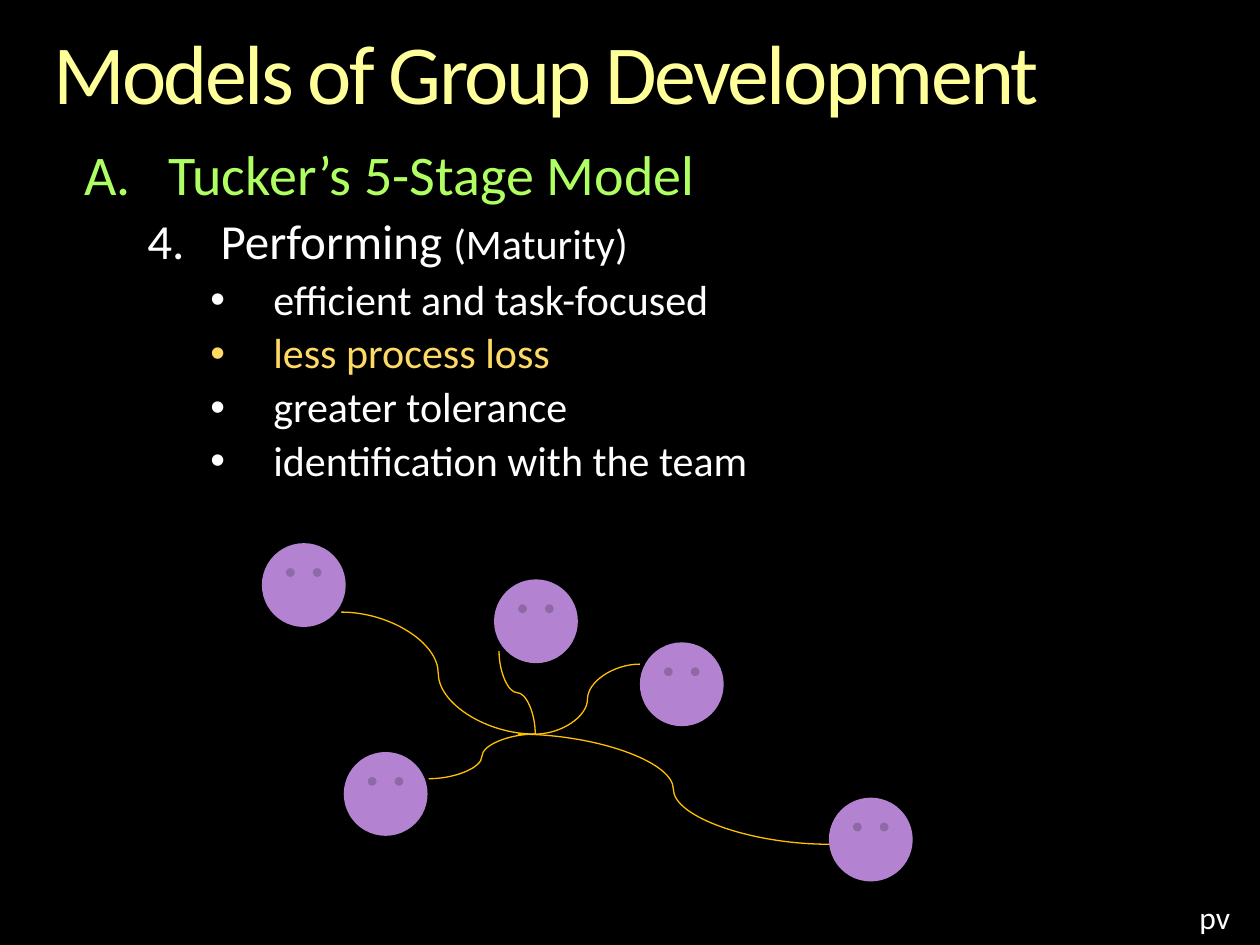
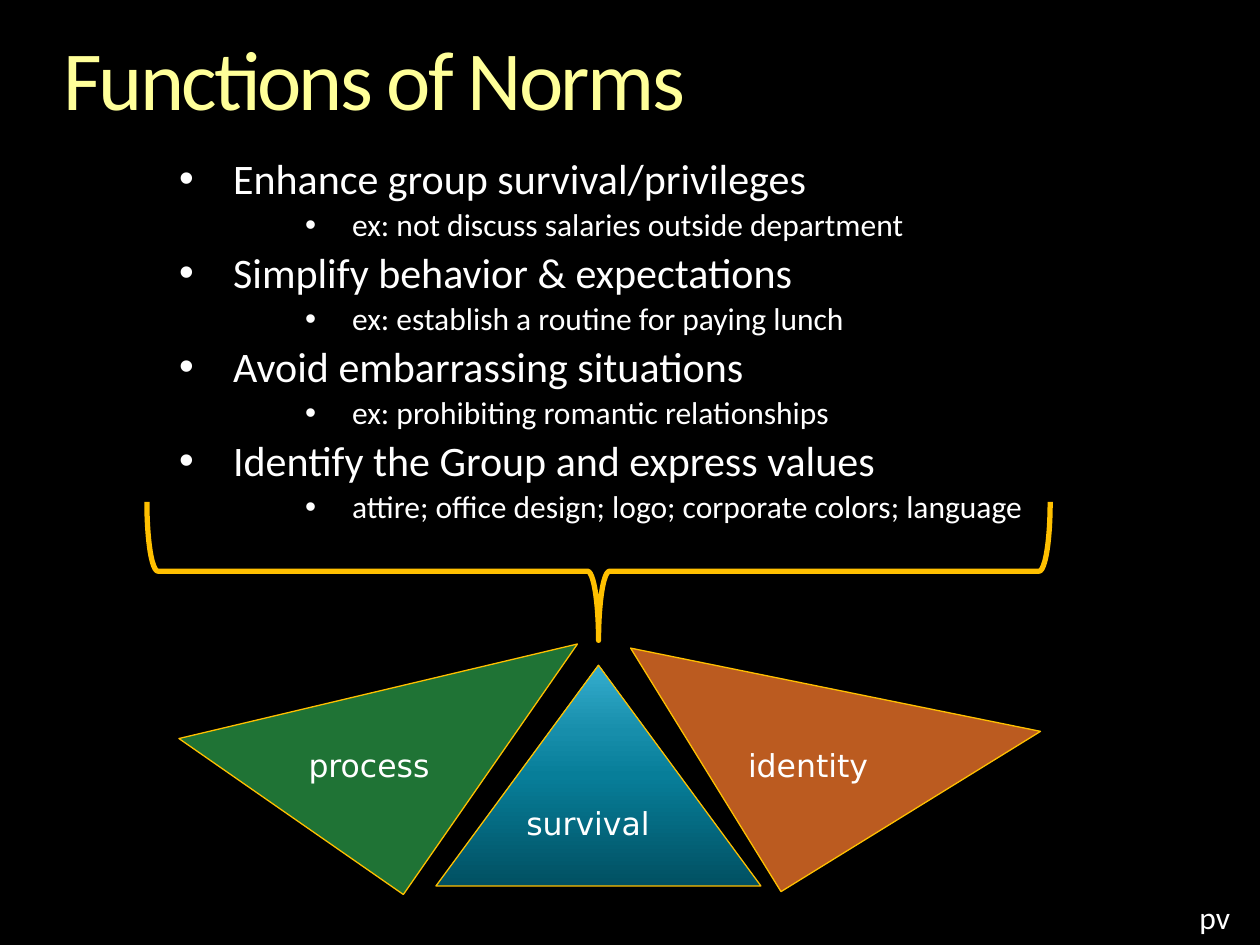
from dataclasses import dataclass

from lxml import etree
from pptx import Presentation
from pptx import util as u
from pptx.dml.color import RGBColor
from pptx.enum import shapes, text
from pptx.oxml.ns import qn


@dataclass(frozen=True)
class Theme:
    font: str = "Calibri"
    label_font: str = "DejaVu Sans"
    background: str = "000000"
    title: str = "FFFF99"
    heading: str = "B0FF62"
    body: str = "FFFFFF"
    highlight: str = "FFD966"
    line: str = "FFC000"
    face: str = "B382D0"
    process: str = "1F7335"
    identity: str = "BB5B20"
    survival: tuple = ((0, "015062"), (50, "077E99"), (70, "178EAB"), (100, "35ADCE"))
    title_size: int = 48
    heading_size: int = 32
    stage_size: int = 28
    point_size: int = 24
    small_size: int = 18
    thin: float = 0.75
    thick: float = 3


THEME = Theme()
SHAPE = shapes.MSO_SHAPE


@dataclass(frozen=True)
class ListStyle:
    """Outline level, left margin and hanging indent in cm, and bullet element."""
    level: int
    margin: float
    hanging: float
    bullet: tuple = ("a:buChar", {"char": "•"})


MODEL = ListStyle(0, 1.7, 1.7, ("a:buAutoNum", {"type": "alphaUcPeriod"}))
STAGE = ListStyle(1, 2.75, 1.48, ("a:buAutoNum", {"type": "arabicPeriod", "startAt": "4"}))
TRAIT = ListStyle(2, 3.81, 1.27)
NORM = ListStyle(0, 1.09, 1.09)
EXAMPLE = ListStyle(2, 3.49, 0.95)


def cm(*lengths):
    return [u.Cm(length) for length in lengths]


def add_run(paragraph, wording, size, color=THEME.body, font=THEME.font):
    run = paragraph.add_run()
    run.text = wording
    run.font.name = font
    run.font.size = u.Pt(size)
    run.font.color.rgb = RGBColor.from_string(color)
    return run


def prepare_frame(frame):
    """Remove the insets and let the frame grow downwards."""
    frame.margin_left = frame.margin_top = frame.margin_right = frame.margin_bottom = 0
    frame.word_wrap = True
    frame.vertical_anchor = text.MSO_ANCHOR.TOP
    frame.auto_size = text.MSO_AUTO_SIZE.SHAPE_TO_FIT_TEXT


def add_title_slide(presentation, title, box):
    """Add a title-only slide with its title and the shared footer."""
    slide = presentation.slides.add_slide(presentation.slide_layouts[5])
    shape = slide.shapes.title
    shape.left, shape.top, shape.width, shape.height = cm(*box)
    prepare_frame(shape.text_frame)
    paragraph = shape.text_frame.paragraphs[0]
    paragraph.alignment = text.PP_ALIGN.LEFT
    paragraph.line_spacing = 0.9
    run = add_run(paragraph, title, THEME.title_size, THEME.title)
    run._r.get_or_add_rPr().set("spc", "-150")
    add_label(slide, "pv", (23.93, 17.98, 1.47, 1.07), THEME.font)
    return slide


def add_label(slide, wording, box, font=THEME.label_font):
    frame = slide.shapes.add_textbox(*cm(*box)).text_frame
    frame.word_wrap = True
    add_run(frame.paragraphs[0], wording, THEME.small_size, font=font)


def set_bullet(paragraph, style):
    paragraph.level = style.level
    properties = paragraph._p.get_or_add_pPr()
    properties.set("marL", str(u.Cm(style.margin)))
    properties.set("indent", str(-u.Cm(style.hanging)))
    etree.SubElement(properties, qn("a:buFont"), typeface="Arial")
    tag, attributes = style.bullet
    etree.SubElement(properties, qn(tag), attributes)


def add_outline(slide, box, items):
    """Each item is a list style followed by its runs: (wording, size[, color])."""
    frame = slide.shapes.add_textbox(*cm(*box)).text_frame
    prepare_frame(frame)
    for index, (style, *runs) in enumerate(items):
        paragraph = frame.add_paragraph() if index else frame.paragraphs[0]
        set_bullet(paragraph, style)
        paragraph.line_spacing = 0.9
        if index:
            paragraph.space_before = u.Pt(0.2 * runs[0][1])
        for run in runs:
            add_run(paragraph, *run)


def add_figure(slide, kind, box, fill=None, line_width=None, rotation=0):
    shape = slide.shapes.add_shape(kind, *cm(*box))
    shape.shadow.inherit = False
    shape.rotation = rotation
    if fill:
        shape.fill.solid()
        shape.fill.fore_color.rgb = RGBColor.from_string(fill)
    else:
        shape.fill.background()
    if line_width:
        shape.line.color.rgb = RGBColor.from_string(THEME.line)
        shape.line.width = u.Pt(line_width)
    else:
        shape.line.fill.background()
    return shape


def fill_upwards(shape, stops):
    """Fill with a gradient whose first stop lies at the bottom."""
    shape.fill.gradient()
    shape.fill.gradient_angle = 90
    stop_list = shape._element.spPr.find(".//" + qn("a:gsLst"))
    stop_list.clear()
    for percent, color in stops:
        stop = etree.SubElement(stop_list, qn("a:gs"), pos=str(percent * 1000))
        etree.SubElement(stop, qn("a:srgbClr"), val=color)


def add_curve(slide, start, end, upright=False):
    """Draw an S-curve; an upright one leaves and arrives vertically."""
    (x1, y1), (x2, y2) = start, end
    if upright:
        middle_x, middle_y = (x1 + x2) / 2, (y1 + y2) / 2
        half_x, half_y = (y1 - y2) / 2, (x2 - x1) / 2
        x1, y1 = middle_x - half_x, middle_y - half_y
        x2, y2 = middle_x + half_x, middle_y + half_y
    connector = slide.shapes.add_connector(shapes.MSO_CONNECTOR.CURVE, *cm(x1, y1, x2, y2))
    connector.line.color.rgb = RGBColor.from_string(THEME.line)
    connector.line.width = u.Pt(THEME.thin)
    properties = connector._element.spPr
    etree.SubElement(properties, qn("a:effectLst"))
    if upright:
        properties.find(qn("a:xfrm")).set("rot", str(270 * 60000))


def build_group_models(presentation):
    slide = add_title_slide(presentation, "Models of Group Development", (1.07, 0.64, 22.86, 1.5))
    size = THEME.point_size
    add_outline(slide, (1.7, 2.97, 22.23, 7.06), [
        (MODEL, ("Tucker’s 5-Stage Model", THEME.heading_size, THEME.heading)),
        (STAGE, ("Performing ", THEME.stage_size), ("(Maturity)", size)),
        (TRAIT, ("efficient and task-focused", size)),
        (TRAIT, ("less process loss", size, THEME.highlight)),
        (TRAIT, ("greater tolerance", size)),
        (TRAIT, ("identification with the team", size)),
    ])
    face_size = 1.69
    for left, top in ((5.28, 10.95), (9.96, 11.68), (6.93, 15.16), (16.71, 16.08), (12.9, 12.95)):
        add_figure(slide, SHAPE.SMILEY_FACE, (left, top, face_size, face_size), THEME.face)
    hub = (10.79, 14.8)
    add_curve(slide, (8.64, 15.7), hub)
    add_curve(slide, hub, (10.06, 13.13), upright=True)
    add_curve(slide, hub, (12.9, 13.39))
    add_curve(slide, (10.44, 14.8), (16.71, 17.02))
    add_curve(slide, (6.88, 12.34), hub)


def build_norm_functions(presentation):
    slide = add_title_slide(presentation, "Functions of Norms", (1.27, 0.76, 22.86, 1.63))
    norms = (
        ("Enhance group survival/privileges", "ex: not discuss salaries outside department"),
        ("Simplify behavior & expectations", "ex: establish a routine for paying lunch"),
        ("Avoid embarrassing situations", "ex: prohibiting romantic relationships"),
        ("Identify the Group and express values",
         "attire; office design; logo; corporate colors; language"),
    )
    items = []
    for norm, example in norms:
        items.append((NORM, (norm, THEME.point_size)))
        items.append((EXAMPLE, (example, THEME.small_size)))
    add_outline(slide, (3.61, 3.18, 20.6, 8.81), items)

    brace = add_figure(slide, SHAPE.RIGHT_BRACE, (10.67, 2.41, 2.79, 18.21),
                       line_width=THEME.thick, rotation=90)
    brace.adjustments[0], brace.adjustments[1] = 0.08, 0.5
    survival = add_figure(slide, SHAPE.ISOSCELES_TRIANGLE, (8.79, 13.41, 6.55, 4.45),
                          line_width=THEME.thin)
    fill_upwards(survival, THEME.survival)
    add_figure(slide, SHAPE.RIGHT_TRIANGLE, (13.77, 11.02, 6.15, 5.77),
               THEME.identity, THEME.thin, 328.3)
    add_figure(slide, SHAPE.RIGHT_TRIANGLE, (4.55, 11.18, 6.15, 5.51),
               THEME.process, THEME.thin, 304.8)
    for wording, left, top in (("survival", 10.36, 16.08), ("process", 5.97, 14.91),
                               ("identity", 14.83, 14.91)):
        add_label(slide, wording, (left, top, 3.18, 1.07))


def main():
    presentation = Presentation()
    presentation.slide_width, presentation.slide_height = cm(25.4, 19.05)
    background = presentation.slide_master.background.fill
    background.solid()
    background.fore_color.rgb = RGBColor.from_string(THEME.background)
    build_group_models(presentation)
    build_norm_functions(presentation)
    presentation.save("out.pptx")


if __name__ == "__main__":
    main()
